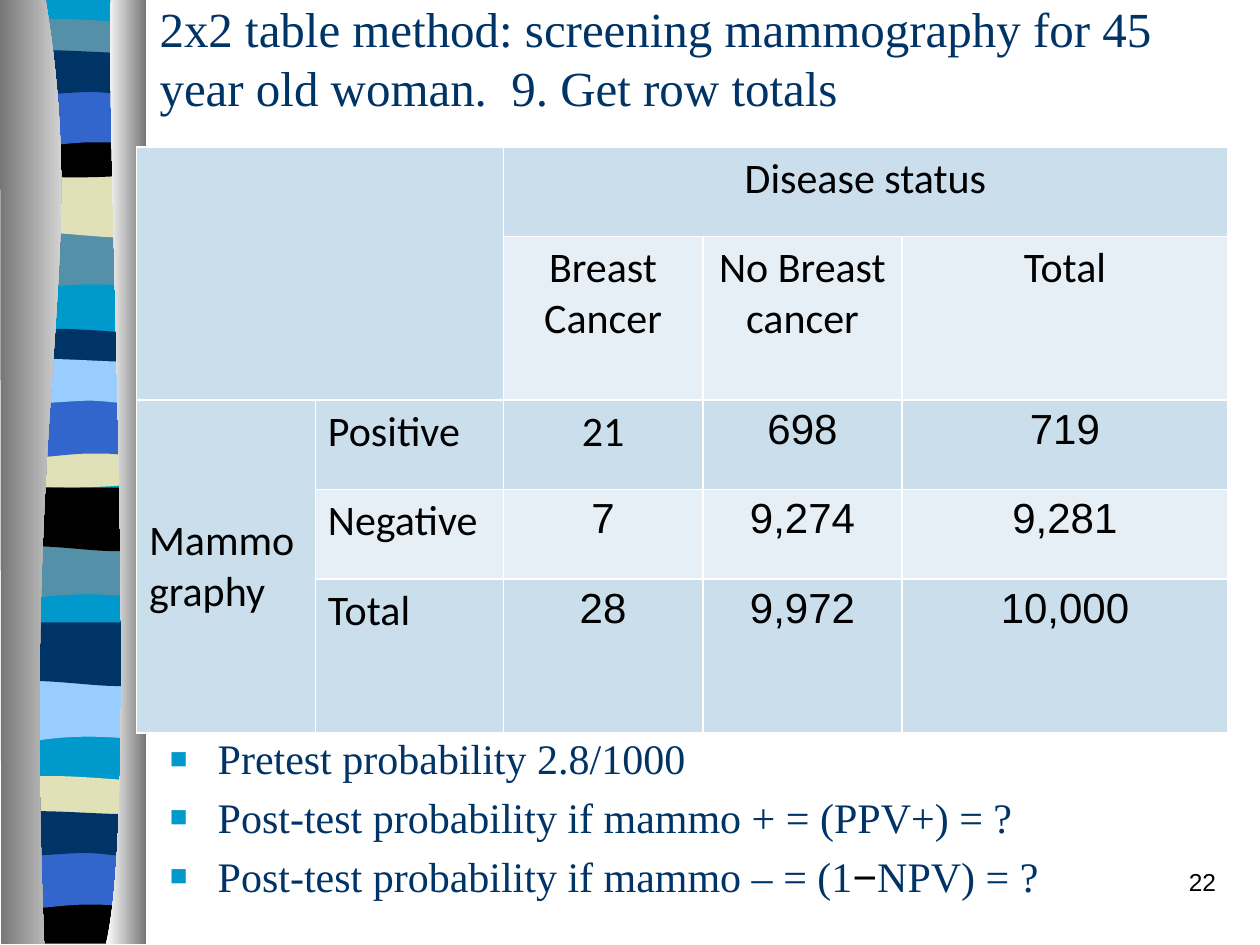
from lxml import etree
from pptx import Presentation
from pptx.dml.color import RGBColor
from pptx.enum.text import MSO_ANCHOR, MSO_AUTO_SIZE, PP_ALIGN
from pptx.oxml.ns import qn
from pptx.util import Inches, Pt

LEFT, CENTER, RIGHT = PP_ALIGN.LEFT, PP_ALIGN.CENTER, PP_ALIGN.RIGHT
TOP, MIDDLE = MSO_ANCHOR.TOP, MSO_ANCHOR.MIDDLE
NO_AUTOFIT = MSO_AUTO_SIZE.NONE

NAVY = RGBColor(0x00, 0x33, 0x66)
CYAN = RGBColor(0x00, 0x99, 0xCC)
TEAL = RGBColor(0x54, 0x90, 0xA8)
SAND = RGBColor(0xE1, 0xE1, 0xB7)
BLUE = RGBColor(0x33, 0x66, 0xCC)
SKY = RGBColor(0x99, 0xCC, 0xFF)
BLACK = RGBColor(0x00, 0x00, 0x00)
WHITE = RGBColor(0xFF, 0xFF, 0xFF)
GRAY = RGBColor(0x76, 0x76, 0x76)
DARK_ROW = RGBColor(0xCB, 0xDE, 0xEC)
LIGHT_ROW = RGBColor(0xE7, 0xEF, 0xF6)

SERIF, SANS, TABLE_FONT = "Times New Roman", "Arial", "Calibri"

# Outlines in thousandths of the slide width: pairs are corners, sixes are Bézier curves.
BANDS = {
    "ripple": [(108, 0), (108, 47), (33, 39, 18, 55, 0, 47), (0, 0)],
    "swell": [(108, 0), (108, 48), (90, 56, 33, 42, 0, 48), (0, 0)],
    "lens": [(108, 5), (108, 29), (90, 33, 18, 33, 0, 29), (0, 5),
             (7, 0, 23, 1, 41, 1), (59, 1, 94, 4, 108, 5)],
    "bowl": [(108, 0), (108, 33), (90, 38, 18, 38, 0, 33), (0, 0), (66, 5, 85, 0, 108, 0)],
    "base": [(108, 0), (108, 37), (0, 37), (0, 0), (66, 5, 85, 0, 108, 0)],
    "arch": [(108, 0), (108, 47), (92, 42, 85, 42, 67, 42), (49, 42, 17, 47, 0, 47), (0, 0)],
    "wave": [(108, 5), (108, 36), (101, 41, 84, 36, 66, 36), (48, 36, 11, 41, 0, 36),
             (0, 5), (15, 0, 73, 5, 91, 5), (109, 5, 105, 5, 108, 5)],
    "backing": [(108, 0), (108, 748), (0, 748), (0, 0)],
}
RIBBON = [
    ("backing", 6, -3, CYAN),
    ("ripple", 6, 181, TEAL), ("swell", 6, 138, SAND), ("lens", 6, 14, TEAL),
    ("bowl", 6, 104, BLACK), ("arch", 6, 71, BLUE), ("wave", 6, 37, NAVY),
    ("ripple", 1, 427, TEAL), ("swell", 3, 387, BLACK), ("lens", 5, 260, NAVY),
    ("bowl", 3, 350, SAND), ("arch", 5, 318, BLUE), ("wave", 5, 282, SKY),
    ("ripple", 2, 540, SKY), ("swell", 4, 494, NAVY), ("lens", 3, 615, SAND),
    ("base", 3, 712, BLACK), ("arch", 1, 676, BLUE), ("wave", 1, 641, NAVY),
]
LEFT_DRAPE = [(36, -1), (72, 216, 17, 296, 35, 749), (1, 749), (0, -1)]
RIGHT_DRAPE = [(88, -1), (84, 125, 111, 646, 84, 749), (116, 749), (116, 0)]

COLUMNS = [17.04, 17.9, 19, 19, 31]
ROWS = [8.52, 15.6, 8.52, 8.52, 14.64]
CELLS = [
    ["", "", "Disease status", "", ""],
    ["", "", "Breast Cancer", "No Breast cancer", "Total"],
    ["Mammography", "Positive", "21", "698", "719"],
    ["", "Negative", "7", "9,274", "9,281"],
    ["", "Total", "28", "9,972", "10,000"],
]
MERGES = [(0, 0, 1, 1), (0, 2, 0, 4), (2, 0, 4, 0)]


def write(paragraph, text, font=SERIF, size=24, color=NAVY, align=LEFT):
    paragraph.alignment = align
    run = paragraph.add_run()
    run.text = text
    run.font.name = font
    run.font.size = Pt(size)
    run.font.color.rgb = color


def bend(shape, outline):
    """Join the three line segments of each curve into one Bézier segment."""
    segments = iter(shape._element.findall(".//" + qn("a:lnTo")))
    for step in outline[1:]:
        segment = next(segments)
        if len(step) == 6:
            segment.tag = qn("a:cubicBezTo")
            for _ in range(2):
                extra = next(segments)
                segment.append(extra[0])
                extra.getparent().remove(extra)


def add_bullet(paragraph):
    properties = paragraph._p.get_or_add_pPr()
    properties.set("marL", str(Inches(0.38)))
    properties.set("indent", str(-Inches(0.38)))
    color = etree.SubElement(properties, qn("a:buClr"))
    etree.SubElement(color, qn("a:srgbClr"), val=str(CYAN))
    etree.SubElement(properties, qn("a:buSzPct"), val="70000")
    etree.SubElement(properties, qn("a:buFont"), typeface=SANS)
    etree.SubElement(properties, qn("a:buChar"), char="■")


def add_borders(cell):
    properties = cell._tc.get_or_add_tcPr()
    for index, side in enumerate(("a:lnL", "a:lnR", "a:lnT", "a:lnB")):
        line = etree.Element(qn(side), w=str(Pt(1)))
        fill = etree.SubElement(line, qn("a:solidFill"))
        etree.SubElement(fill, qn("a:srgbClr"), val=str(WHITE))
        properties.insert(index, line)


class SlideBuilder:
    """Places elements on a grid of 120 columns by 90 rows."""

    def __init__(self, presentation):
        self.slide = presentation.slides.add_slide(presentation.slide_layouts[5])
        self.shapes = self.slide.shapes
        self.width = presentation.slide_width
        self.column = presentation.slide_width / 120
        self.row = presentation.slide_height / 90

    def box(self, left, top, width, height):
        return (round(left * self.column), round(top * self.row),
                round(width * self.column), round(height * self.row))

    def title(self, text, *place):
        shape = self.shapes.title
        shape.left, shape.top, shape.width, shape.height = self.box(*place)
        frame = shape.text_frame
        frame.word_wrap, frame.auto_size = True, NO_AUTOFIT
        frame.vertical_anchor = MIDDLE
        write(frame.paragraphs[0], text, size=28)

    def text_frame(self, *place):
        frame = self.shapes.add_textbox(*self.box(*place)).text_frame
        frame.word_wrap = True
        return frame

    def bullets(self, items, *place):
        """Each item is a list of (text, format) runs."""
        frame = self.text_frame(*place)
        for index, runs in enumerate(items):
            paragraph = frame.add_paragraph() if index else frame.paragraphs[0]
            paragraph.space_before = Pt(4.8)
            add_bullet(paragraph)
            for text, style in runs:
                write(paragraph, text, **style)

    def outline(self, group, outline, left=0, top=0, color=None, gradient=None):
        unit = self.width / 1000
        points = [(round((step[i] + left) * unit), round((step[i + 1] + top) * unit))
                  for step in outline for i in range(0, len(step), 2)]
        builder = group.shapes.build_freeform(*points[0])
        builder.add_line_segments(points[1:], close=True)
        shape = builder.convert_to_shape()
        bend(shape, outline)
        shape.shadow.inherit = False
        shape.line.fill.background()
        if gradient:
            shape.fill.gradient()
            shape.fill.gradient_angle = 0
            for stop, stop_color in zip(shape.fill.gradient_stops, gradient):
                stop.color.rgb = stop_color
        else:
            shape.fill.solid()
            shape.fill.fore_color.rgb = color

    def ribbon(self):
        group = self.shapes.add_group_shape()
        for band, left, top, color in RIBBON:
            self.outline(group, BANDS[band], left, top, color)
        self.outline(group, LEFT_DRAPE, gradient=(GRAY, WHITE))
        self.outline(group, RIGHT_DRAPE, gradient=(WHITE, GRAY))

    def table(self, left, top):
        place = self.box(left, top, sum(COLUMNS), sum(ROWS))
        table = self.shapes.add_table(len(ROWS), len(COLUMNS), *place).table
        for column, width in zip(table.columns, COLUMNS):
            column.width = round(width * self.column)
        for row, height in zip(table.rows, ROWS):
            row.height = round(height * self.row)
        for r, texts in enumerate(CELLS):
            for c, text in enumerate(texts):
                cell = table.cell(r, c)
                cell.fill.solid()
                cell.fill.fore_color.rgb = LIGHT_ROW if r % 2 else DARK_ROW
                add_borders(cell)
                cell.vertical_anchor = MIDDLE if text == "Mammography" else TOP
                is_count = r > 1 and c > 1 and text != "21"
                if text:
                    write(cell.text_frame.paragraphs[0], text, color=BLACK,
                          font=SANS if is_count else TABLE_FONT,
                          align=CENTER if c > 1 else LEFT)
        for first_row, first_column, last_row, last_column in MERGES:
            table.cell(first_row, first_column).merge(table.cell(last_row, last_column))


def main():
    presentation = Presentation()
    presentation.slide_width, presentation.slide_height = Inches(10), Inches(7.5)
    builder = SlideBuilder(presentation)
    builder.ribbon()
    builder.title("2x2 table method: screening mammography for 45 year old woman.  "
                  "9. Get row totals", 14, 2, 102, 7)
    number = builder.text_frame(92, 82, 25, 6).paragraphs[0]
    write(number, "22", font=SANS, size=14, color=BLACK, align=RIGHT)
    builder.bullets([
        [("Pretest probability 2.8/1000", {})],
        [("Post-test probability if mammo + = (PPV+) = ?", {})],
        [("Post-test probability if mammo – = (1", {}),
         ("−", {"font": SANS, "color": BLACK}), ("NPV) = ?", {})],
    ], 15, 69.2, 102, 19)
    builder.table(13, 14)
    presentation.save("out.pptx")


if __name__ == "__main__":
    main()
